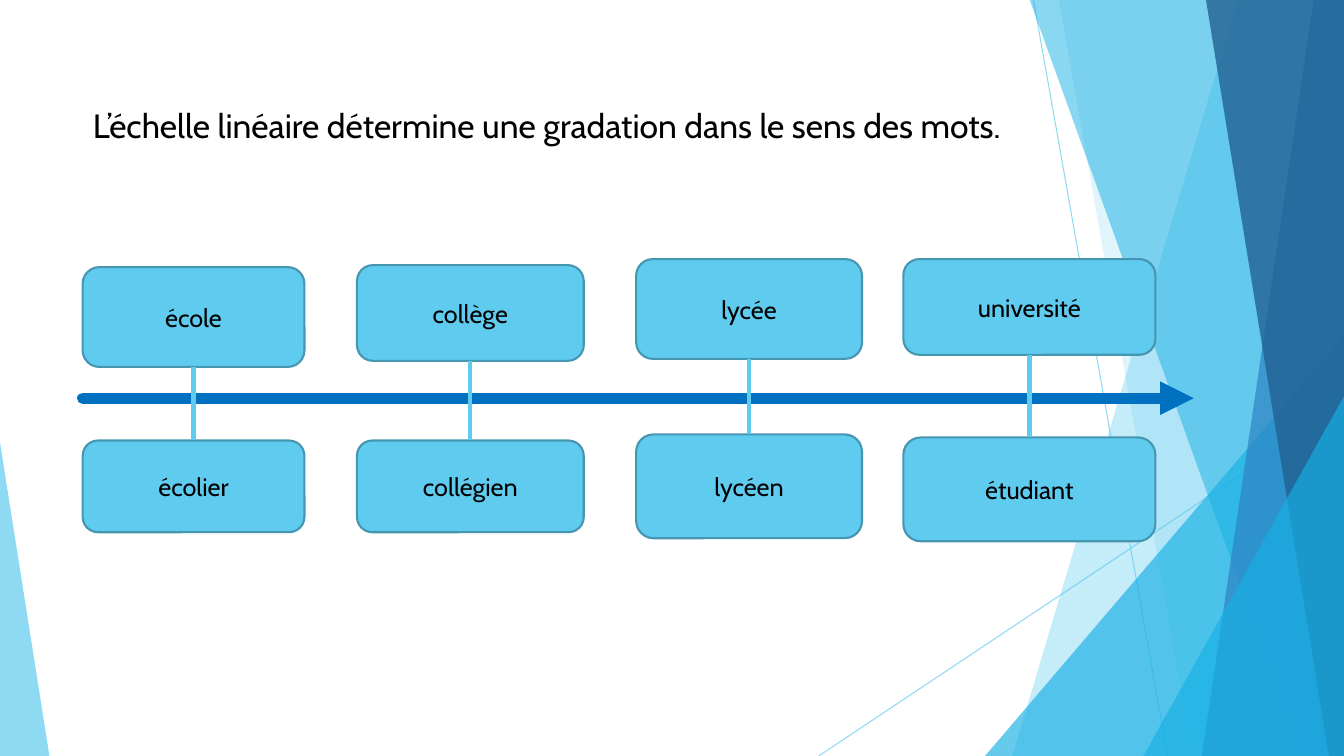
from dataclasses import dataclass

from pptx import Presentation
from pptx.dml.color import RGBColor
from pptx.enum import shapes, text
from pptx.oxml import ns
from pptx.util import Inches, Pt
from lxml import etree

TITLE = "L’échelle linéaire détermine une gradation dans le sens des mots."
TITLE_BOX = (0.82, 0.99, 10.42, 0.8)

# left, width, then (word, top, height) above and below the arrow
STAGES = [
    (0.82, 2.2, ("école", 2.65, 0.99), ("écolier", 4.37, 0.91)),
    (3.54, 2.25, ("collège", 2.63, 0.95), ("collégien", 4.37, 0.91)),
    (6.31, 2.24, ("lycée", 2.57, 0.99), ("lycéen", 4.31, 1.03)),
    (8.96, 2.5, ("université", 2.57, 0.95), ("étudiant", 4.34, 1.03)),
]
SCALE_ARROW = (0.82, 3.95, 11.84, 3.95)


@dataclass(frozen=True)
class Theme:
    font: str = "Cabin"
    title_size: int = 24
    word_size: int = 18
    ink: str = "000000"
    sky: str = "5FCBEF"
    outline: str = "4696B1"
    arrow: str = "0070C0"
    cyan: str = "17B0E4"
    blue: str = "2E83C3"
    navy: str = "226292"


THEME = Theme()
WIDTH, HEIGHT = 13.33, 7.5

# Decoration, back to front
RAYS = [(10.25, 0, 11.58, HEIGHT), (WIDTH, 4.03, 8.12, HEIGHT)]
# kind, geometry, colour, opacity in percent
# band: x of the left edge at top and bottom; triangle: box and apex position
FACETS = [
    ("band", (12.28, 10.04), THEME.sky, 36),
    ("band", (10.5, 11.83), THEME.sky, 20),
    ("triangle", (9.77, 3.33, 3.56, 4.17, 1), THEME.cyan, 66),
    ("band", (10.21, 12.91), THEME.cyan, 50),
    ("band", (13.03, 11.92), THEME.blue, 70),
    ("band", (11.96, 13.18), THEME.navy, 80),
    ("triangle", (11.34, 3.93, 1.99, 3.57, 1), THEME.cyan, 66),
    ("triangle", (0, 4.39, 0.49, 3.11, 0), THEME.sky, 70),
]


def inches(values):
    return [Inches(value) for value in values]


def set_opacity(fill_parent, percent):
    """Add an alpha value to the first solid colour below an element."""
    color = next(fill_parent.iter(ns.qn("a:srgbClr")))
    etree.SubElement(color, ns.qn("a:alpha")).set("val", str(percent * 1000))


def format_text(frame, size, alignment, anchor):
    frame.word_wrap = True
    frame.vertical_anchor = anchor
    paragraph = frame.paragraphs[0]
    paragraph.alignment = alignment
    paragraph.font.name = THEME.font
    paragraph.font.size = Pt(size)
    paragraph.font.color.rgb = RGBColor.from_string(THEME.ink)


def add_line(slide, ends, color, width):
    line = slide.shapes.add_connector(shapes.MSO_CONNECTOR.STRAIGHT, *inches(ends))
    line.line.color.rgb = RGBColor.from_string(color)
    line.line.width = Pt(width)
    etree.SubElement(line.element.spPr, ns.qn("a:effectLst"))
    return line


def add_band(slide, top_x, bottom_x):
    """Add a band that runs from a slanted left edge to the slide's right side."""
    corners = [(top_x, -0.01), (WIDTH, -0.01), (WIDTH, HEIGHT), (bottom_x, HEIGHT)]
    start, *others = [inches(corner) for corner in corners]
    builder = slide.shapes.build_freeform(*start)
    builder.add_line_segments(others, close=True)
    return builder.convert_to_shape()


def add_triangle(slide, left, top, width, height, apex):
    triangle = slide.shapes.add_shape(
        shapes.MSO_SHAPE.ISOSCELES_TRIANGLE, *inches((left, top, width, height)))
    triangle.adjustments[0] = apex
    return triangle


def add_decoration(slide):
    for ends in RAYS:
        ray = add_line(slide, ends, THEME.sky, 0.75)
        set_opacity(ray.element.spPr, 70)
    builders = {"band": add_band, "triangle": add_triangle}
    for kind, geometry, color, opacity in FACETS:
        facet = builders[kind](slide, *geometry)
        facet.shadow.inherit = False
        facet.fill.solid()
        facet.fill.fore_color.rgb = RGBColor.from_string(color)
        facet.line.fill.background()
        set_opacity(facet.element.spPr, opacity)


def add_title(slide):
    title = slide.shapes.title
    title.left, title.top, title.width, title.height = inches(TITLE_BOX)
    title.text_frame.text = TITLE
    format_text(title.text_frame, THEME.title_size, text.PP_ALIGN.LEFT, text.MSO_ANCHOR.TOP)
    slide.shapes.element.append(title.element)  # in front of the decoration


def add_scale_arrow(slide):
    arrow = add_line(slide, SCALE_ARROW, THEME.arrow, 8)
    outline = arrow.element.spPr.find(ns.qn("a:ln"))
    outline.set("cap", "rnd")
    etree.SubElement(outline, ns.qn("a:tailEnd")).set("type", "triangle")


def add_word_box(slide, left, width, word, top, height):
    box = slide.shapes.add_shape(
        shapes.MSO_SHAPE.ROUNDED_RECTANGLE, *inches((left, top, width, height)))
    box.shadow.inherit = False
    box.fill.solid()
    box.fill.fore_color.rgb = RGBColor.from_string(THEME.sky)
    box.line.color.rgb = RGBColor.from_string(THEME.outline)
    box.line.width = Pt(1.5)
    box.text_frame.text = word
    format_text(box.text_frame, THEME.word_size, text.PP_ALIGN.CENTER, text.MSO_ANCHOR.MIDDLE)
    return box


def add_stages(slide):
    for left, width, place, learner in STAGES:
        upper = add_word_box(slide, left, width, *place)
        lower = add_word_box(slide, left, width, *learner)
        link = add_line(slide, (0, 0, 0, 0), THEME.sky, 3)
        link.begin_connect(upper, 2)
        link.end_connect(lower, 0)


def main():
    presentation = Presentation()
    presentation.slide_width, presentation.slide_height = inches((WIDTH, HEIGHT))
    slide = presentation.slides.add_slide(presentation.slide_layouts[5])
    add_decoration(slide)
    add_title(slide)
    add_scale_arrow(slide)
    add_stages(slide)
    presentation.save("out.pptx")


if __name__ == "__main__":
    main()
